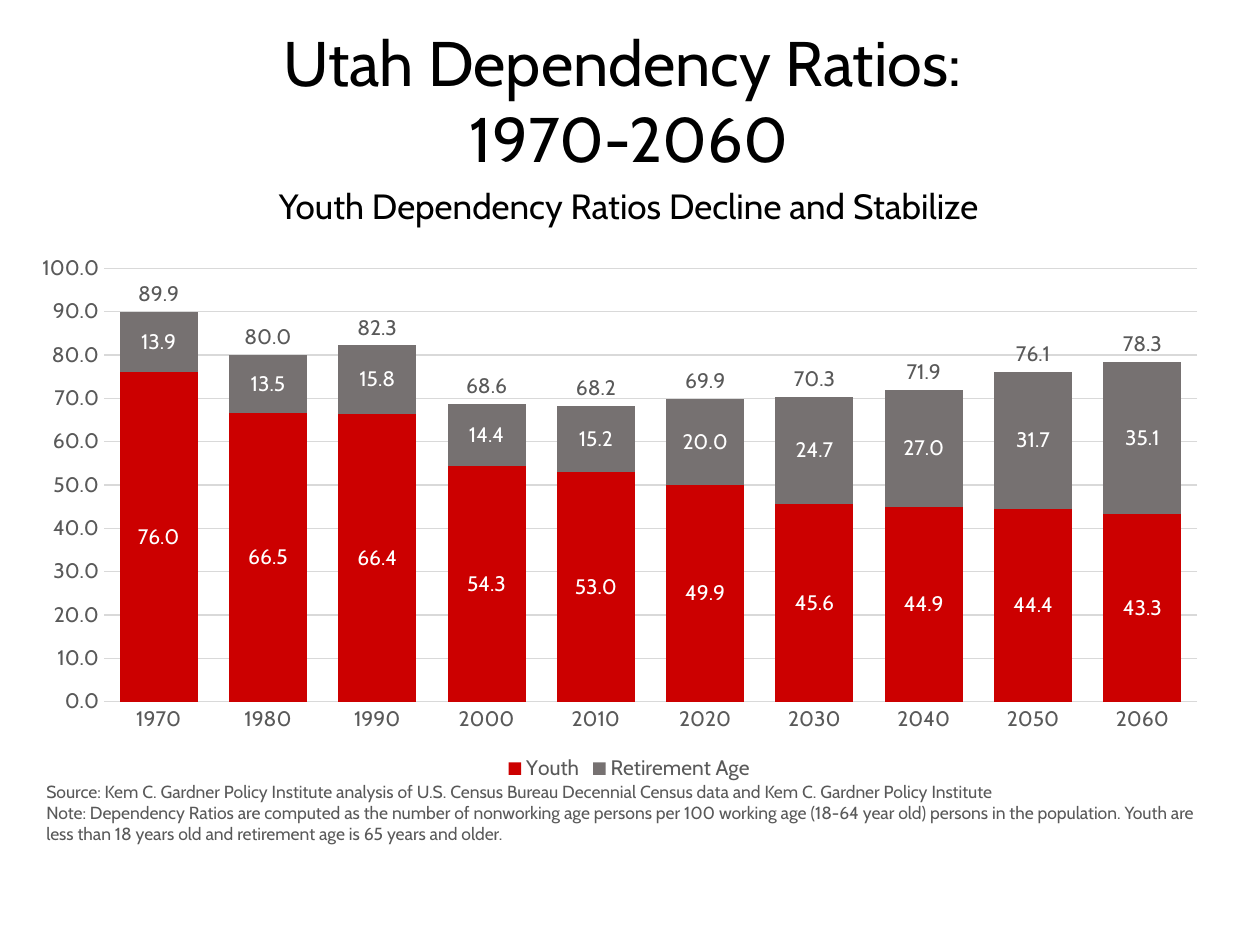
from pptx import Presentation
from pptx.chart.data import CategoryChartData as ChartData
from pptx.dml.color import RGBColor as RGB
from pptx.enum.chart import XL_CHART_TYPE as Kind, XL_LABEL_POSITION as Pos
from pptx.enum.chart import XL_LEGEND_POSITION as Side, XL_TICK_MARK as Tick
from pptx.enum.text import MSO_ANCHOR as Anchor, PP_ALIGN as Align
from pptx.oxml import parse_xml
from pptx.oxml.ns import nsdecls, qn
from pptx.util import Pt

FONT = "Cabin"
COLORS = {"black": "000000", "text": "595959", "grid": "D9D9D9",
          "white": "FFFFFF", "youth": "CC0000", "retired": "767171"}

YEARS = [str(year) for year in range(1970, 2061, 10)]
# name, values, fill, label colour, label place
SERIES = [
    ("Youth", (76, 66.5, 66.4, 54.3, 53, 49.9, 45.6, 44.9, 44.4, 43.3),
     "youth", "white", Pos.CENTER),
    ("Retirement Age",
     (13.9, 13.5, 15.8, 14.4, 15.2, 20, 24.7, 27, 31.7, 35.1),
     "retired", "white", Pos.CENTER),
    ("Series 3",
     (89.9, 80, 82.3, 68.6, 68.2, 69.9, 70.3, 71.9, 76.1, 78.3),
     None, "text", Pos.INSIDE_BASE),
]
TITLE = ["Utah Dependency Ratios: ", "1970-2060"]
SUBTITLE = ["Youth Dependency Ratios Decline and Stabilize"]
NOTES = [
    "Source: Kem C. Gardner Policy Institute analysis of U.S. Census Bureau "
    "Decennial Census data and Kem C. Gardner Policy Institute",
    "Note: Dependency Ratios are computed as the number of nonworking age "
    "persons per 100 working age (18-64 year old) persons in the population. "
    "Youth are less than 18 years old and retirement age is 65 years and "
    "older.",
]


def apply(target, **values):
    for name, value in values.items():
        setattr(target, name, value)


def color(name):
    return RGB.from_string(COLORS[name])


def style(font, size, tone):
    apply(font, name=FONT, size=Pt(size), bold=False)
    font.color.rgb = color(tone)


def add_text(slide, box, lines, size, tone, align=Align.LEFT, **frame_set):
    frame = slide.shapes.add_textbox(*map(Pt, box)).text_frame
    apply(frame, word_wrap=True, **frame_set)
    frame.text = "\n".join(lines)
    for para in frame.paragraphs:
        para.alignment = align
        style(para.runs[0].font, size, tone)


def set_line(line, tone):
    line.color.rgb = color(tone)
    line.width = Pt(0.75)


def style_axes(chart):
    cat, val = chart.category_axis, chart.value_axis
    for axis in (cat, val):
        apply(axis, major_tick_mark=Tick.NONE, minor_tick_mark=Tick.NONE)
        style(axis.tick_labels.font, 12, "text")
    set_line(cat.format.line, "grid")
    apply(val, minimum_scale=0, maximum_scale=100, major_unit=10,
          has_major_gridlines=True)
    val.format.line.fill.background()
    set_line(val.major_gridlines.format.line, "grid")


def style_series(plot):
    apply(plot, gap_width=40, overlap=100, vary_by_categories=False)
    for series, (_, _, fill, tone, place) in zip(plot.series, SERIES):
        series.invert_if_negative = False
        if fill:
            series.format.fill.solid()
            series.format.fill.fore_color.rgb = color(fill)
        else:
            series.format.fill.background()
        labels = series.data_labels
        apply(labels, show_value=True, position=place,
              number_format="#,##0.0", number_format_is_linked=False)
        style(labels.font, 12, tone)


def add_legend(chart, hidden):
    """Put the legend below, without the entry of the hidden series."""
    chart.has_legend = True
    legend = chart.legend
    apply(legend, position=Side.BOTTOM, include_in_layout=False)
    style(legend.font, 12, "text")
    entry = parse_xml(f'<c:legendEntry {nsdecls("c")}><c:idx val="{hidden}"/>'
                      '<c:delete val="1"/></c:legendEntry>')
    legend._element.find(qn("c:legendPos")).addnext(entry)


def place_plot(chart, **parts):
    """Fix the inner plot area, in fractions of the chart."""
    area = chart._chartSpace.chart.plotArea
    for old in area.findall(qn("c:layout")):
        area.remove(old)
    modes = "".join(f'<c:{key}Mode val="edge"/>' for key in "xy")
    sizes = "".join(f'<c:{key} val="{num}"/>' for key, num in parts.items())
    area.insert(0, parse_xml(
        f'<c:layout {nsdecls("c")}><c:manualLayout>'
        f'<c:layoutTarget val="inner"/>{modes}{sizes}'
        '</c:manualLayout></c:layout>'))


def add_ratios(slide, box):
    data = ChartData(number_format="0.0")
    data.categories = YEARS
    for name, values, *_ in SERIES:
        data.add_series(name, values)
    chart = slide.shapes.add_chart(
        Kind.COLUMN_STACKED, *map(Pt, box), data).chart
    chart.has_title = False
    style(chart.font, 12, "text")
    style_axes(chart)
    style_series(chart.plots[0])
    add_legend(chart, hidden=2)
    place_plot(chart, x=0.056, y=0.044, w=0.924, h=0.8)


def main():
    deck = Presentation()
    apply(deck, slide_width=Pt(720), slide_height=Pt(540))
    slide = deck.slides.add_slide(deck.slide_layouts[6])
    add_text(slide, (49, 41.8, 620.6, 104.4), SUBTITLE, 20, "black",
             Align.CENTER, vertical_anchor=Anchor.MIDDLE, margin_top=Pt(50))
    add_ratios(slide, (21.6, 139.7, 676, 309.6))
    add_text(slide, (19.4, 442.8, 681.1, 43.9), NOTES, 10, "text")
    add_text(slide, (21.6, 10.1, 676, 94.3), TITLE, 36, "black", Align.CENTER)
    deck.save("out.pptx")


if __name__ == "__main__":
    main()
